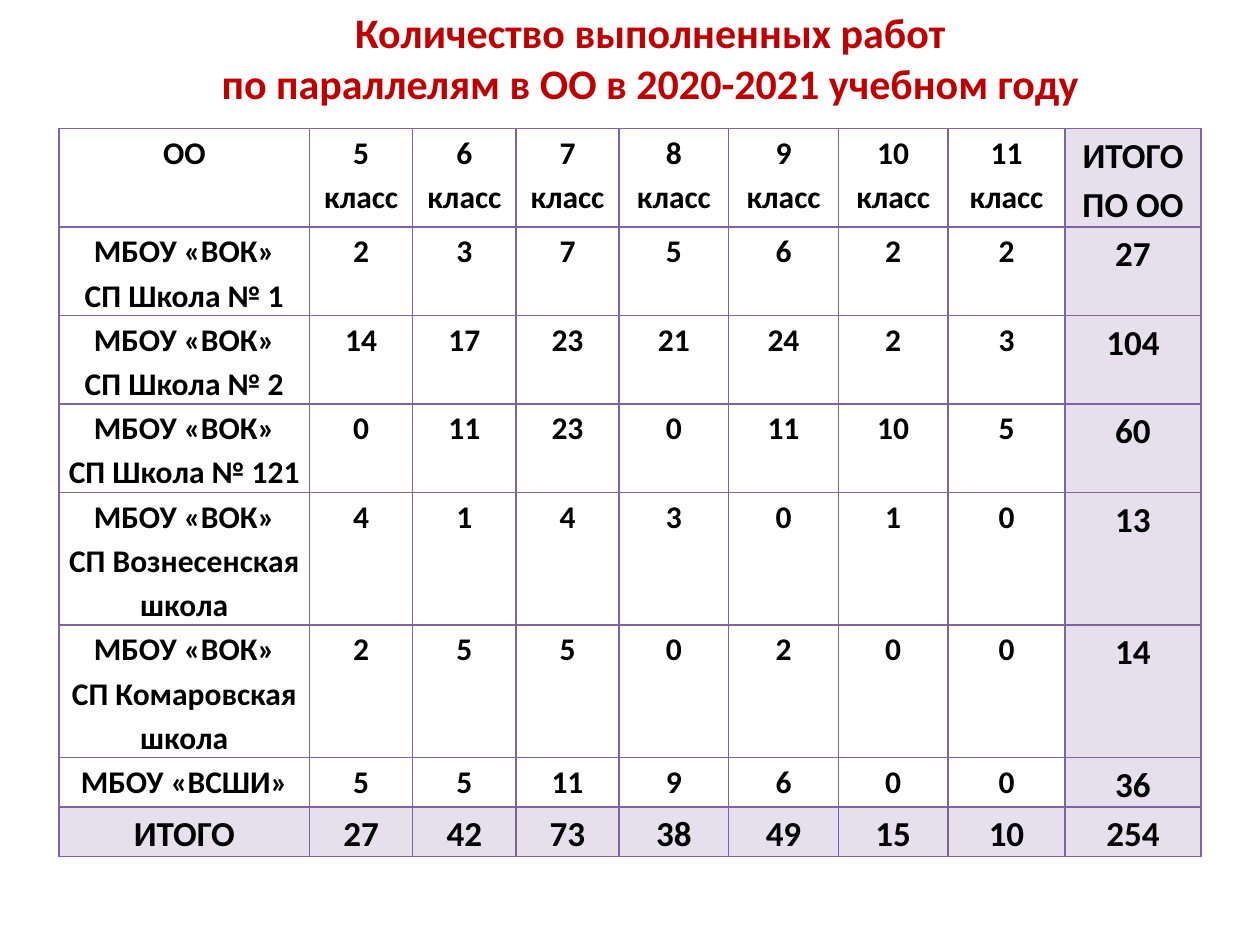
from lxml.etree import SubElement
from pptx import Presentation
from pptx.dml.color import RGBColor
from pptx.enum.text import MSO_ANCHOR as Anchor, MSO_AUTO_SIZE as AutoSize, PP_ALIGN as Align
from pptx.oxml.ns import qn
from pptx.util import Cm, Pt

RED, BLACK, PURPLE, LILAC = "C00000", "000000", "8064A2", "E6E0EC"


def write(frame, text, size, color, spacing=1.0):
    """Fill the frame with bold centred paragraphs, one per line of text."""
    frame.text = text
    for para in frame.paragraphs:
        para.alignment = Align.CENTER
        para.line_spacing = spacing
        font = para.runs[0].font
        font.name, font.size, font.bold = "Calibri", Pt(size), True
        font.color.rgb = RGBColor.from_string(color)


def add_borders(cell, color, width):
    props = cell._tc.get_or_add_tcPr()
    for side in ("lnL", "lnR", "lnT", "lnB"):
        line = SubElement(props, qn(f"a:{side}"), w=str(Pt(width)))
        fill = SubElement(line, qn("a:solidFill"))
        SubElement(fill, qn("a:srgbClr"), val=color)


deck = Presentation()
deck.slide_width, deck.slide_height = Cm(25.4), Cm(19.05)
page = deck.slides.add_slide(deck.slide_layouts[5])

# Title; the deep bottom margin lifts the two lines clear of the table
title = page.shapes.title
title.left, title.top, title.width, title.height = Cm(2.39), Cm(0), Cm(21.44), Cm(3.07)
frame = title.text_frame
frame.auto_size = AutoSize.NONE
frame.vertical_anchor = Anchor.MIDDLE
frame.margin_bottom = Cm(0.89)
write(frame, "Количество выполненных работ\nпо параллелям в ОО в 2020-2021 учебном году", 24, RED)

# Works per school for grades 5 to 11; the totals are summed below
schools = [
    ("МБОУ «ВОК»\nСП Школа № 1", [2, 3, 7, 5, 6, 2, 2]),
    ("МБОУ «ВОК»\nСП Школа № 2", [14, 17, 23, 21, 24, 2, 3]),
    ("МБОУ «ВОК»\nСП Школа № 121", [0, 11, 23, 0, 11, 10, 5]),
    ("МБОУ «ВОК»\nСП Вознесенская школа", [4, 1, 4, 3, 0, 1, 0]),
    ("МБОУ «ВОК»\nСП Комаровская школа", [2, 5, 5, 0, 2, 0, 0]),
    ("МБОУ «ВСШИ»", [5, 5, 11, 9, 6, 0, 0]),
]
grade_totals = [sum(counts) for counts in zip(*(works for _, works in schools))]
rows = [["ОО", *(f"{grade} класс" for grade in range(5, 12)), "ИТОГО ПО ОО"]]
for name, works in schools + [("ИТОГО", grade_totals)]:
    rows.append([name, *works, sum(works)])

widths = [5.05] + [2.08] * 3 + [2.21] * 3 + [2.36, 2.74]
heights = [1.47] * 4 + [2.18] * 2 + [0.74] * 2
holder = page.shapes.add_table(len(rows), len(widths), Cm(1.19), Cm(2.59),
                               Cm(sum(widths)), Cm(sum(heights)))
table = holder.table
table.first_row = table.horz_banding = False
for column, width in zip(table.columns, widths):
    column.width = Cm(width)
for row, height in zip(table.rows, heights):
    row.height = Cm(height)

for r, values in enumerate(rows):
    for c, value in enumerate(values):
        cell = table.cell(r, c)
        is_total = r == len(rows) - 1 or c == len(widths) - 1
        cell.margin_left = cell.margin_right = Cm(0.18)
        cell.margin_top = cell.margin_bottom = Cm(0)
        add_borders(cell, PURPLE, 1)
        if is_total:
            cell.fill.solid()
            cell.fill.fore_color.rgb = RGBColor.from_string(LILAC)
        else:
            cell.fill.background()
        write(cell.text_frame, str(value), 20 if is_total else 18, BLACK, spacing=1.15)

deck.save("out.pptx")
